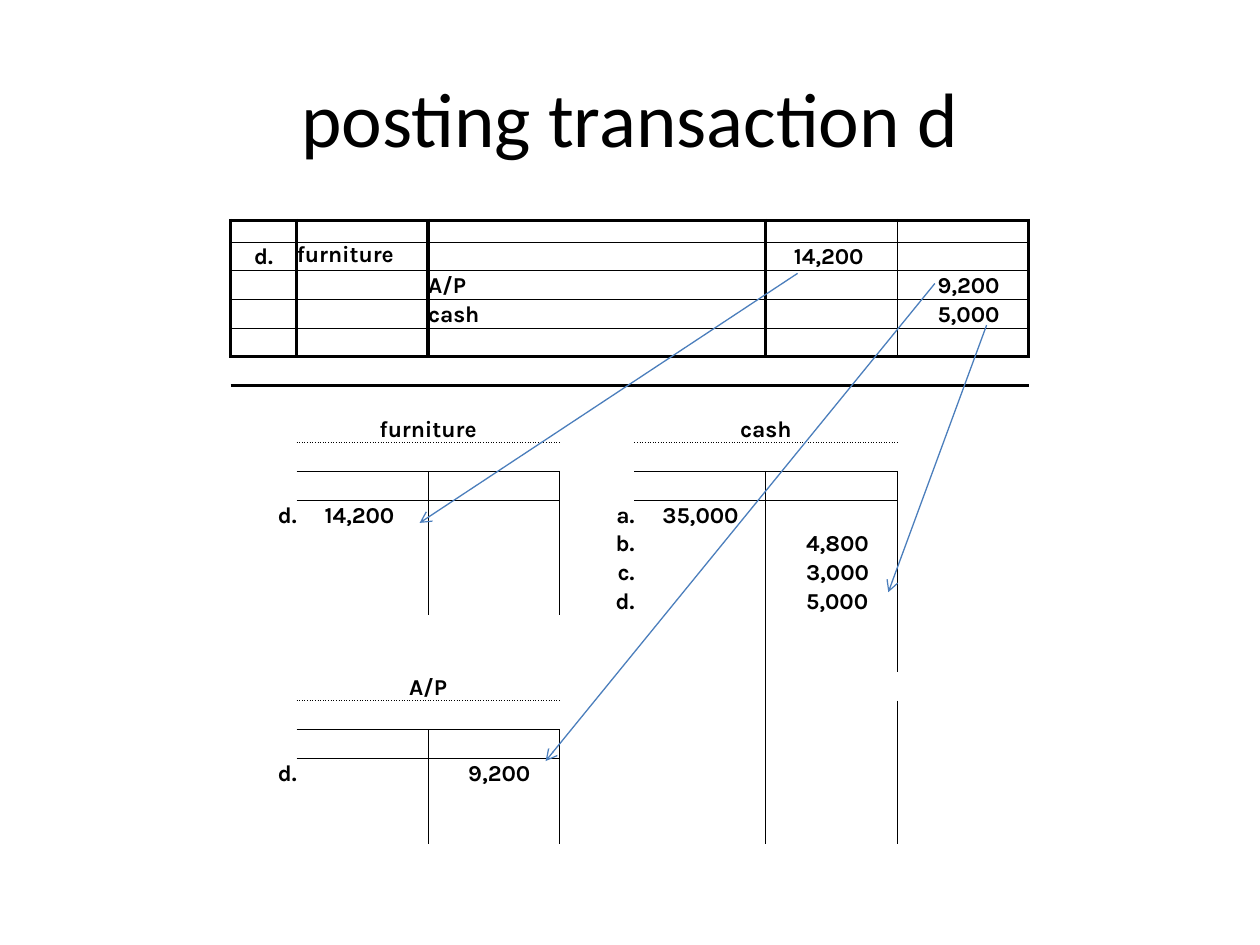
from collections import defaultdict
from lxml.etree import SubElement
from pptx import Presentation
from pptx.dml.color import RGBColor
from pptx.enum.shapes import MSO_CONNECTOR as LineKind
from pptx.enum.text import MSO_ANCHOR as Anchor, PP_ALIGN as Align
from pptx.oxml.ns import qn
from pptx.util import Pt

BLACK, BLUE = "000000", "4B7EBC"
THICK, THIN = 2, 0.5
ROWS = 22
COLUMN_WIDTHS = [37.7, 75.1, 75.1, 42.9, 75.1, 75.1, 75.1]
ROW_HEIGHTS = [12.3] + [16.4] * (ROWS - 1)


def color(hex_code):
    return RGBColor.from_string(hex_code)


def style(paragraph, face, size, align, bold=False):
    paragraph.alignment = align
    font = paragraph.font
    font.name, font.size, font.bold = face, Pt(size), bold
    font.color.rgb = color(BLACK)


deck = Presentation()
deck.slide_width, deck.slide_height = Pt(720), Pt(540)
slide = deck.slides.add_slide(deck.slide_layouts[6])

# Title
heading = slide.shapes.add_textbox(Pt(36), Pt(21.6), Pt(648), Pt(90)).text_frame
heading.word_wrap = True
heading.vertical_anchor = Anchor.MIDDLE
heading.text = "posting transaction d"
style(heading.paragraphs[0], "Calibri", 44, Align.CENTER)

# Ledger grid, without a banded style
ledger_frame = slide.shapes.add_table(
    ROWS, len(COLUMN_WIDTHS), Pt(131.8), Pt(126),
    Pt(sum(COLUMN_WIDTHS)), Pt(sum(ROW_HEIGHTS)))
ledger = ledger_frame.table
ledger.first_row = ledger.horz_banding = False
style_id = next(ledger_frame._element.iter(qn("a:tableStyleId")))
style_id.text = "{2D5ABB26-0587-4C30-8999-92F81FD0307C}"
for column, width in zip(ledger.columns, COLUMN_WIDTHS):
    column.width = Pt(width)
for row, height in zip(ledger.rows, ROW_HEIGHTS):
    row.height = Pt(height)

# Rules: (line number, first cell, last cell, weight, dash)
across = [(line, 0, 6, THICK if line in (0, 5) else THIN, "solid")
          for line in range(6)]
down = [(line, 0, 4, THIN if line == 6 else THICK, "solid")
        for line in (0, 1, 5, 6, 7)]

# T-accounts: name, title row, first column, last row
entries = {}
for name, top, left, bottom in [("furniture", 7, 1, 13), ("cash", 7, 4, 21),
                                ("A/P", 16, 1, 21)]:
    ledger.cell(top, left).merge(ledger.cell(top, left + 1))
    entries[top, left] = (name, Align.CENTER, 0)
    across.append((top + 1, left, left + 1, THIN, "sysDot"))
    across.append((top + 2, left, left + 1, THIN, "solid"))
    down.append((left + 1, top + 2, bottom, THIN, "solid"))

# Each rule belongs to the cells on both of its sides
borders = defaultdict(dict)
for line, first, last, weight, dash in across:
    for col in range(first, last + 1):
        borders[line - 1, col]["lnB"] = borders[line, col]["lnT"] = weight, dash
for line, first, last, weight, dash in down:
    for row in range(first, last + 1):
        borders[row, line - 1]["lnR"] = borders[row, line]["lnL"] = weight, dash

# Entry text: account names, reference letters, amounts
entries[1, 1] = ("furniture", Align.LEFT, 0)
entries[2, 2] = ("A/P", Align.LEFT, 0)
entries[3, 2] = ("cash", Align.LEFT, 0)
entries[1, 0] = ("d.", Align.CENTER, 0)
for row, col, letter in [(10, 0, "d."), (19, 0, "d."), (10, 3, "a."),
                         (11, 3, "b."), (12, 3, "c."), (13, 3, "d.")]:
    entries[row, col] = (letter, Align.RIGHT, 0)
for row, col, amount in [(1, 5, "14,200"), (2, 6, "9,200"), (3, 6, "5,000"),
                         (10, 1, "14,200"), (10, 4, "35,000"), (11, 5, "4,800"),
                         (12, 5, "3,000"), (13, 5, "5,000"), (19, 2, "9,200")]:
    entries[row, col] = (amount, Align.LEFT, 16 if len(amount) == 6 else 23)

# Fill the cells
for row in range(ROWS):
    for col in range(len(COLUMN_WIDTHS)):
        cell = ledger.cell(row, col)
        text, align, indent = entries.get((row, col), ("", Align.LEFT, 0))
        cell.margin_left = Pt(indent)
        cell.margin_right = cell.margin_top = cell.margin_bottom = 0
        cell.vertical_anchor = Anchor.TOP if (row, col) == (1, 1) else Anchor.BOTTOM
        paragraph = cell.text_frame.paragraphs[0]
        if text:
            cell.text = text
            style(cell.text_frame.paragraphs[0], "Karla", 13, align, True)
        else:
            SubElement(paragraph._p, qn("a:endParaRPr"), sz="800")
        properties = cell._tc.get_or_add_tcPr()
        for side in ("lnL", "lnR", "lnT", "lnB"):
            if side in borders[row, col]:
                weight, dash = borders[row, col][side]
                edge = SubElement(properties, qn("a:" + side), w=str(Pt(weight)))
                paint = SubElement(edge, qn("a:solidFill"))
                SubElement(paint, qn("a:srgbClr"), val=BLACK)
                SubElement(edge, qn("a:prstDash"), val=dash)
        cell.fill.background()

# Posting arrows from the journal entry to the accounts
for x1, y1, x2, y2 in [(455.8, 156.2, 239.8, 298.8), (534.2, 162, 311.8, 434.9),
                       (563.8, 185.8, 507.6, 338.4)]:
    arrow = slide.shapes.add_connector(
        LineKind.STRAIGHT, Pt(x1), Pt(y1), Pt(x2), Pt(y2))
    arrow.line.color.rgb = color(BLUE)
    arrow.line.width = Pt(0.75)
    SubElement(arrow.line._get_or_add_ln(), qn("a:tailEnd"), type="arrow")
    SubElement(arrow._element.spPr, qn("a:effectLst"))

deck.save("out.pptx")
